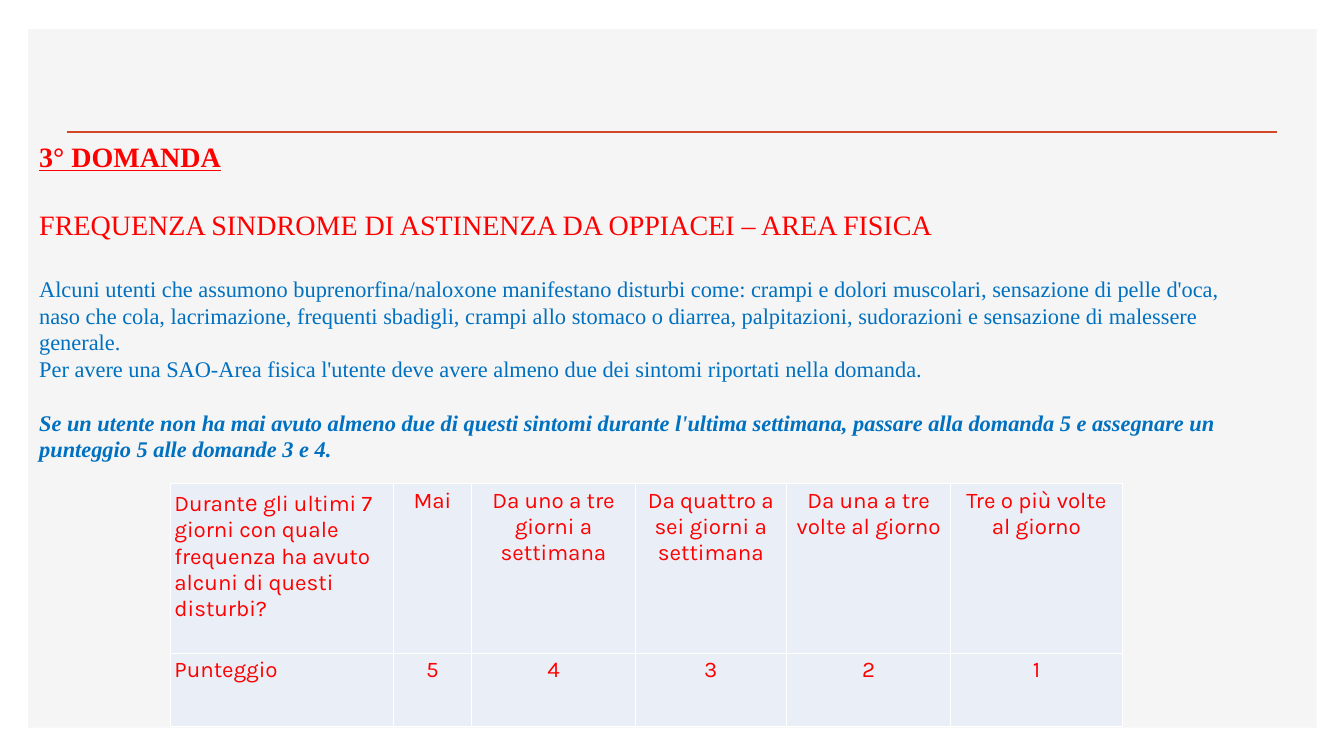
from lxml import etree
from pptx import Presentation, util as u
from pptx.dml.color import RGBColor
from pptx.enum import shapes, text
from pptx.oxml.ns import qn

COLORS = {
    "panel": "F5F5F5", "rule": "D24726", "cell": "EAEFF7",
    "border": "FFFFFF", "red": "FF0000", "blue": "0070C0",
}
SERIF, SANS = "Times New Roman", "Karla"

DISTURBI = (
    "Alcuni utenti che assumono buprenorfina/naloxone manifestano disturbi come: "
    "crampi e dolori muscolari, sensazione di pelle d'oca, naso che cola, lacrimazione, "
    "frequenti sbadigli, crampi allo stomaco o diarrea, palpitazioni, sudorazioni e "
    "sensazione di malessere generale."
)
CRITERIO = (
    "Per avere una SAO-Area fisica l'utente deve avere almeno due dei sintomi "
    "riportati nella domanda."
)
ISTRUZIONE = (
    "Se un utente non ha mai avuto almeno due di questi sintomi durante l'ultima "
    "settimana, passare alla domanda 5 e assegnare un punteggio 5 alle domande 3 e 4."
)
SCALE = [
    ("Mai", "5"),
    ("Da uno a tre giorni a settimana", "4"),
    ("Da quattro a sei giorni a settimana", "3"),
    ("Da una a tre volte al giorno", "2"),
    ("Tre o più volte al giorno", "1"),
]
COLUMN_WIDTHS = [2.21, 0.78, 1.62, 1.5, 1.63, 1.7]
ROW_HEIGHTS = [1.68, 0.73]


def rgb(name):
    return RGBColor.from_string(COLORS[name])


def add_run(paragraph, wording, size=16, font=SERIF, color="red",
            bold=False, italic=False, underline=False):
    run = paragraph.add_run()
    run.text = wording
    run.font.size = u.Pt(size)
    run.font.name = font
    run.font.color.rgb = rgb(color)
    run.font.bold = bold
    run.font.italic = italic
    run.font.underline = underline


def add_panel(slide):
    panel = slide.shapes.add_shape(
        shapes.MSO_SHAPE.RECTANGLE,
        u.Inches(0.28), u.Inches(0.29), u.Inches(12.78), u.Inches(6.93))
    panel.shadow.inherit = False
    panel.fill.solid()
    panel.fill.fore_color.rgb = rgb("panel")
    panel.line.fill.background()


def add_rule(slide):
    rule = slide.shapes.add_connector(
        shapes.MSO_CONNECTOR.STRAIGHT,
        u.Inches(0.66), u.Inches(1.31), u.Inches(12.67), u.Inches(1.31))
    rule.line.color.rgb = rgb("rule")
    rule.line.width = u.Pt(2)
    etree.SubElement(rule._element.spPr, qn("a:effectLst"))


def add_question(slide):
    question = slide.shapes.add_textbox(
        u.Inches(0.29), u.Inches(0.65), u.Inches(12.21), u.Inches(4.01)).text_frame
    question.word_wrap = True
    question.vertical_anchor = text.MSO_ANCHOR.TOP
    question.margin_top = u.Inches(0.73)
    heading_pitch, body_pitch = 24.3, 19.1
    passages = [
        ("3° DOMANDA", heading_pitch, 0, dict(size=20, bold=True, underline=True)),
        ("FREQUENZA SINDROME DI ASTINENZA DA OPPIACEI – AREA FISICA",
         heading_pitch, heading_pitch, dict(size=20)),
        (DISTURBI, body_pitch, heading_pitch, dict(color="blue")),
        (CRITERIO, body_pitch, 0, dict(color="blue")),
        (ISTRUZIONE, body_pitch, body_pitch, dict(color="blue", bold=True, italic=True)),
    ]
    for index, (wording, pitch, gap, style) in enumerate(passages):
        paragraph = question.add_paragraph() if index else question.paragraphs[0]
        paragraph.line_spacing = u.Pt(pitch)
        paragraph.space_before = u.Pt(gap)
        add_run(paragraph, wording, **style)


def set_borders(cell):
    properties = cell._tc.get_or_add_tcPr()
    for position, side in enumerate(("lnL", "lnR", "lnT", "lnB")):
        border = etree.Element(qn(f"a:{side}"), w=str(u.Pt(1)))
        fill = etree.SubElement(border, qn("a:solidFill"))
        etree.SubElement(fill, qn("a:srgbClr"), val=COLORS["border"])
        properties.insert(position, border)


def fill_cell(cell, runs, centred):
    """Write (wording, size) runs into a cell and style it."""
    cell.fill.solid()
    cell.fill.fore_color.rgb = rgb("cell")
    set_borders(cell)
    cell.margin_left = cell.margin_right = u.Inches(0.04)
    cell.margin_top = cell.margin_bottom = u.Inches(0.04)
    paragraph = cell.text_frame.paragraphs[0]
    paragraph.alignment = text.PP_ALIGN.CENTER if centred else text.PP_ALIGN.LEFT
    for wording, size in runs:
        add_run(paragraph, wording, size=size, font=SANS)


def add_score_table(slide):
    scores = slide.shapes.add_table(
        len(ROW_HEIGHTS), len(COLUMN_WIDTHS),
        u.Inches(1.69), u.Inches(4.8),
        u.Inches(sum(COLUMN_WIDTHS)), u.Inches(sum(ROW_HEIGHTS))).table
    for column, width in zip(scores.columns, COLUMN_WIDTHS):
        column.width = u.Inches(width)
    for row, height in zip(scores.rows, ROW_HEIGHTS):
        row.height = u.Inches(height)
    prompt = [
        ("Durant", 16), ("e", 18),
        (" gli ultimi 7 giorni con quale frequenza ha avuto alcuni di questi disturbi?", 16),
    ]
    fill_cell(scores.cell(0, 0), prompt, centred=False)
    fill_cell(scores.cell(1, 0), [("Punteggio", 16)], centred=False)
    for column, answer in enumerate(SCALE, start=1):
        for row, wording in enumerate(answer):
            fill_cell(scores.cell(row, column), [(wording, 16)], centred=True)


def main():
    deck = Presentation()
    deck.slide_width, deck.slide_height = u.Inches(13.33), u.Inches(7.5)
    slide = deck.slides.add_slide(deck.slide_layouts[6])
    add_panel(slide)
    add_rule(slide)
    add_score_table(slide)
    add_question(slide)
    deck.save("out.pptx")


if __name__ == "__main__":
    main()
